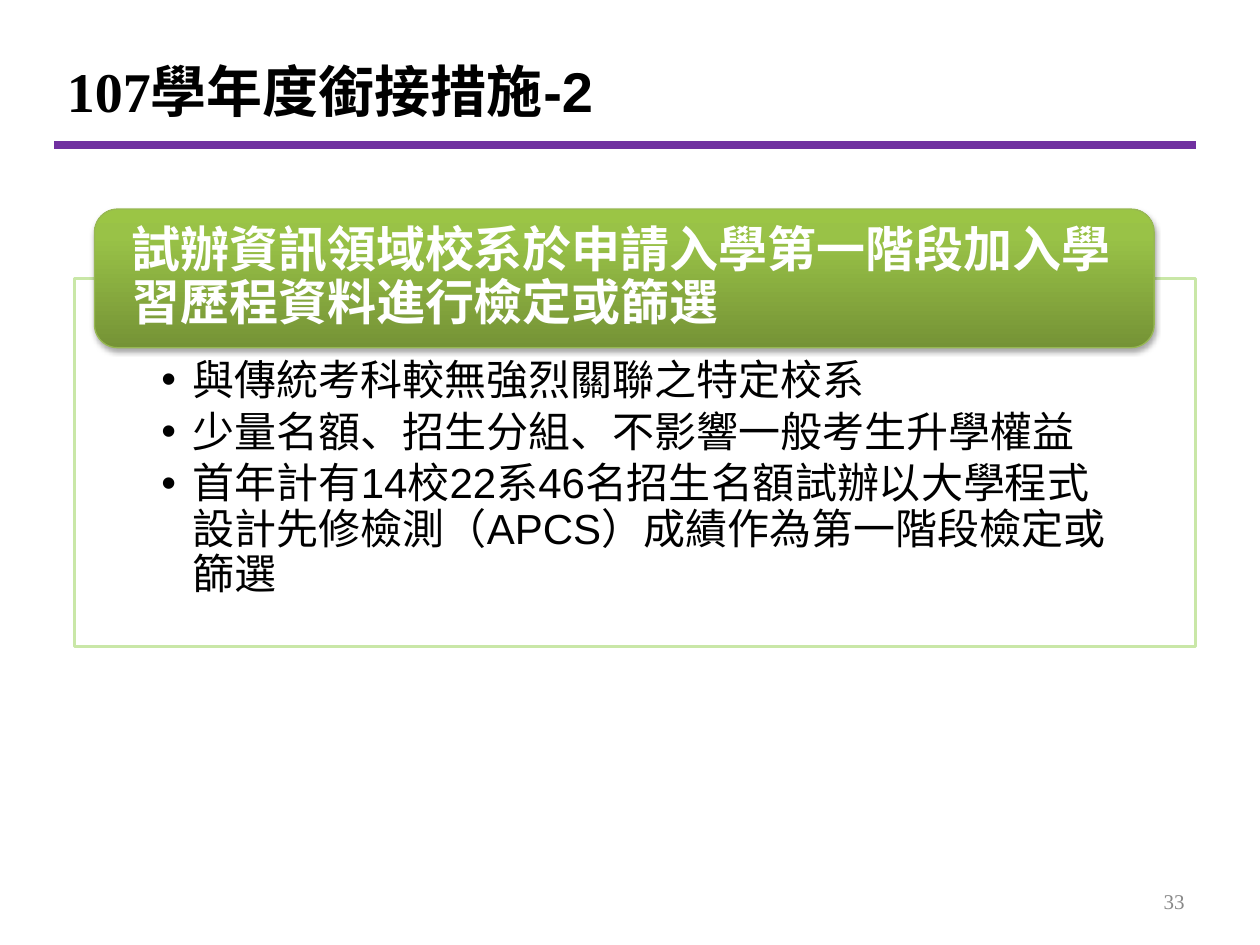
from copy import deepcopy

from lxml.etree import SubElement
from pptx import Presentation
from pptx.dml.color import RGBColor
from pptx.enum.shapes import MSO_CONNECTOR, MSO_SHAPE
from pptx.enum.text import MSO_ANCHOR, PP_ALIGN
from pptx.oxml.ns import qn
from pptx.util import Inches, Pt

TITLE_RUNS = [("107", "Times New Roman"), ("學年度銜接措施-2", "Arial")]
HEADING = "試辦資訊領域校系於申請入學第一階段加入學習歷程資料進行檢定或篩選"
POINTS = [
    "與傳統考科較無強烈關聯之特定校系",
    "少量名額、招生分組、不影響一般考生升學權益",
    "首年計有14校22系46名招生名額試辦以大學程式設計先修檢測（APCS）成績作為第一階段檢定或篩選",
]
PAGE_NUMBER = "33"

BLACK = RGBColor(0x00, 0x00, 0x00)
WHITE = RGBColor(0xFF, 0xFF, 0xFF)
GRAY = RGBColor(0x88, 0x88, 0x88)
PURPLE = RGBColor(0x70, 0x30, 0xA0)
PALE_GREEN = RGBColor(0xC9, 0xE7, 0xA7)
EDGE_GREEN = RGBColor(0x97, 0xB8, 0x53)
GRADIENT = [(0, RGBColor(0x75, 0x93, 0x36)), (0.8, RGBColor(0x99, 0xC2, 0x47)),
            (1, RGBColor(0x9B, 0xC5, 0x45))]

LEFT, RIGHT, RULE_Y = 0.43, 9.49, 1.15
PANEL = (0.59, 2.21, RIGHT - 0.59, 2.92)
BANNER = (0.75, 1.66, 8.41, 1.1)


def inches(values):
    return [Inches(value) for value in values]


def set_frame(shape, insets, anchor):
    frame = shape.text_frame
    frame.word_wrap = True
    frame.vertical_anchor = anchor
    (frame.margin_left, frame.margin_top,
     frame.margin_right, frame.margin_bottom) = inches(insets)
    return frame


def style(paragraph, size, color, face="Arial", bold=False, align=PP_ALIGN.LEFT):
    paragraph.alignment = align
    font = paragraph.font
    font.size, font.name, font.bold = Pt(size), face, bold
    font.color.rgb = color


def add_bullet(paragraph, indent):
    properties = paragraph._p.get_or_add_pPr()
    properties.set("marL", str(Inches(indent)))
    properties.set("indent", str(-Inches(indent)))
    SubElement(properties, qn("a:buFont"), typeface="Arial")
    SubElement(properties, qn("a:buChar"), char="•")


def fill_gradient(shape):
    shape.fill.gradient()
    shape.fill.gradient_angle = 90
    stop_list = shape.fill._xPr.find(qn("a:gradFill")).find(qn("a:gsLst"))
    stop_list.append(deepcopy(stop_list[-1]))
    for stop, (position, color) in zip(shape.fill.gradient_stops, GRADIENT):
        stop.position, stop.color.rgb = position, color


def add_soft_shadow(shape):
    shape.shadow.inherit = False
    effects = shape._element.spPr.find(qn("a:effectLst"))
    shadow = SubElement(effects, qn("a:outerShdw"), blurRad=str(Pt(3.1)),
                        dist=str(Pt(1.8)), dir="5400000", rotWithShape="0")
    color = SubElement(shadow, qn("a:srgbClr"), val=str(BLACK))
    SubElement(color, qn("a:alpha"), val="35000")


def add_title(slide):
    title = slide.shapes.title
    title.left, title.top, title.width, title.height = inches((LEFT, 0.29, 9, 0.85))
    frame = set_frame(title, (0.1, 0.05, 0.1, 0.05), MSO_ANCHOR.MIDDLE)
    paragraph = frame.paragraphs[0]
    style(paragraph, 32, BLACK, bold=True)
    for text, face in TITLE_RUNS:
        run = paragraph.add_run()
        run.text, run.font.name = text, face


def add_rule(slide):
    rule = slide.shapes.add_connector(
        MSO_CONNECTOR.STRAIGHT, *inches((LEFT, RULE_Y, RIGHT, RULE_Y)))
    rule.line.color.rgb, rule.line.width = PURPLE, Pt(4.5)
    SubElement(rule._element.spPr, qn("a:effectLst"))


def add_panel(slide):
    panel = slide.shapes.add_shape(MSO_SHAPE.RECTANGLE, *inches(PANEL))
    panel.shadow.inherit = False
    panel.fill.solid()
    panel.fill.fore_color.rgb = WHITE
    fill_color = panel.fill._xPr.find(qn("a:solidFill"))[0]
    SubElement(fill_color, qn("a:alpha"), val="90000")
    panel.line.color.rgb, panel.line.width = PALE_GREEN, Pt(1.5)
    frame = set_frame(panel, (0.69, 0.64, 0.69, 0.19), MSO_ANCHOR.TOP)
    for index, point in enumerate(POINTS):
        paragraph = frame.add_paragraph() if index else frame.paragraphs[0]
        paragraph.text = point
        paragraph.level = 1
        paragraph.line_spacing = 0.9
        paragraph.space_before = Pt(3.6 if index else 0)
        add_bullet(paragraph, 0.25)
        style(paragraph, 24, BLACK)


def add_banner(slide):
    banner = slide.shapes.add_shape(MSO_SHAPE.ROUNDED_RECTANGLE, *inches(BANNER))
    fill_gradient(banner)
    banner.line.color.rgb, banner.line.width = EDGE_GREEN, Pt(0.75)
    add_soft_shadow(banner)
    frame = set_frame(banner, (0.24, 0, 0.24, 0), MSO_ANCHOR.MIDDLE)
    paragraph = frame.paragraphs[0]
    paragraph.text = HEADING
    paragraph.line_spacing = 0.9
    style(paragraph, 28, WHITE, bold=True)


def add_page_number(slide):
    box = slide.shapes.add_textbox(*inches((7.17, 6.95, 2.33, 0.4)))
    frame = set_frame(box, (0.1, 0.05, 0.1, 0.05), MSO_ANCHOR.MIDDLE)
    frame.text = PAGE_NUMBER
    style(frame.paragraphs[0], 12, GRAY, "Times New Roman", align=PP_ALIGN.RIGHT)


def main():
    deck = Presentation()
    deck.slide_width, deck.slide_height = inches((10, 7.5))
    slide = deck.slides.add_slide(deck.slide_layouts[5])
    for add_part in (add_rule, add_title, add_panel, add_banner, add_page_number):
        add_part(slide)
    deck.save("out.pptx")


if __name__ == "__main__":
    main()
